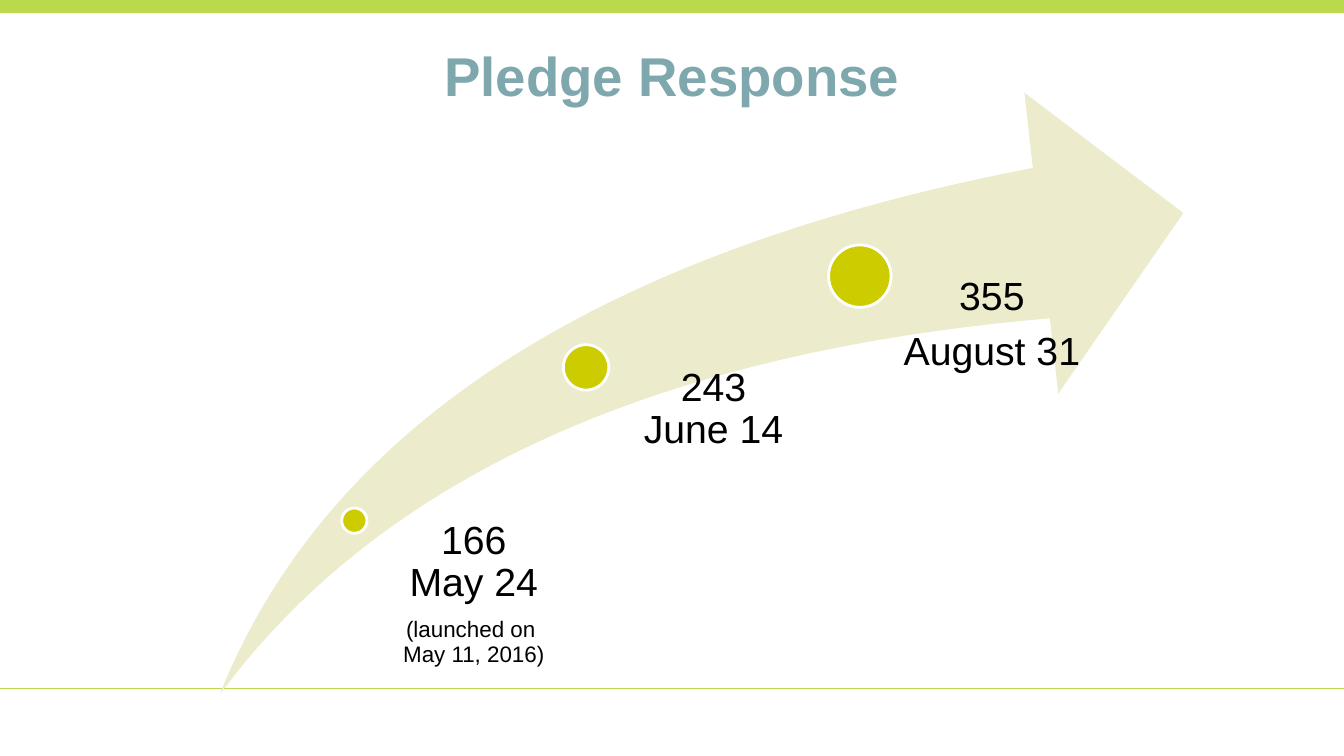
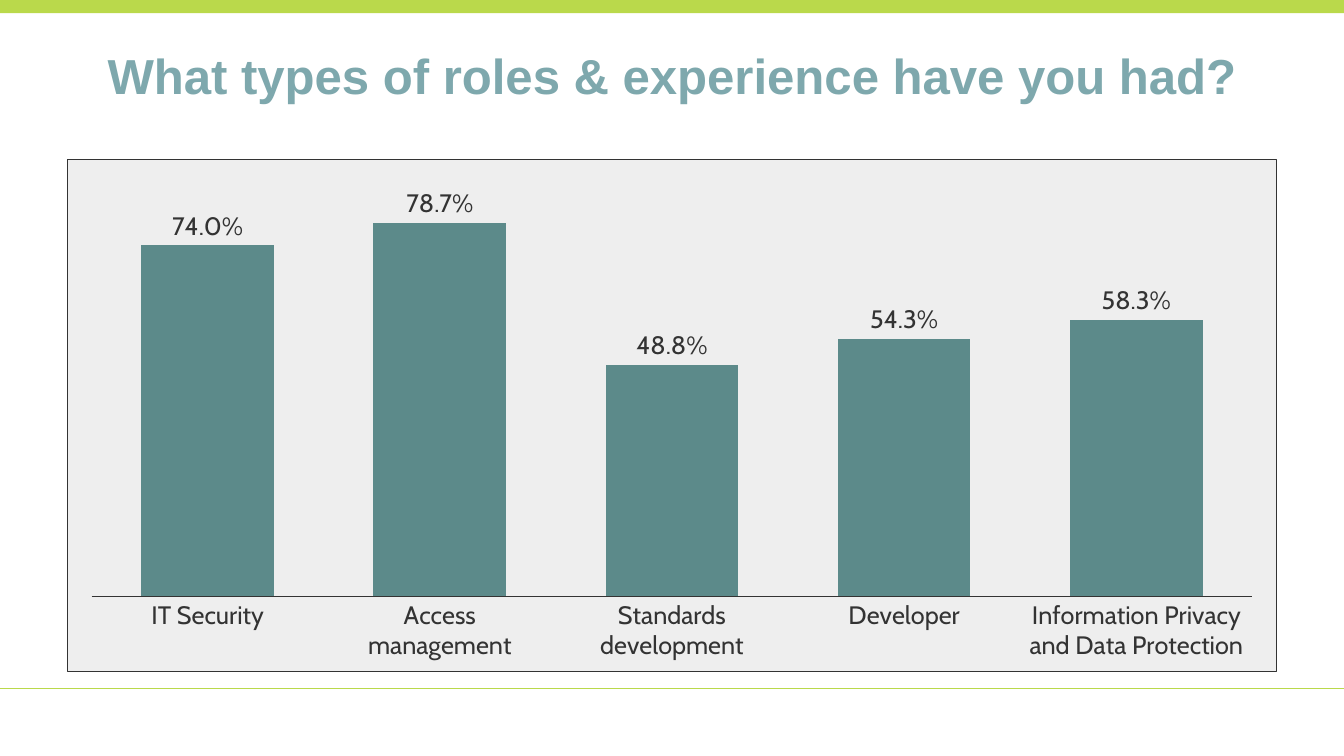
from lxml import etree
from pptx import Presentation
from pptx.chart.data import CategoryChartData
from pptx.dml.color import RGBColor
from pptx.enum.chart import XL_CHART_TYPE, XL_LABEL_POSITION, XL_TICK_MARK
from pptx.enum.shapes import MSO_CONNECTOR, MSO_SHAPE
from pptx.enum.text import MSO_ANCHOR, MSO_AUTO_SIZE, PP_ALIGN
from pptx.oxml import parse_xml
from pptx.oxml.ns import nsdecls, qn
from pptx.util import Inches, Pt

RECTANGLE, OVAL = MSO_SHAPE.RECTANGLE, MSO_SHAPE.OVAL
SWOOSH = MSO_SHAPE.SWOOSH_ARROW
STRAIGHT = MSO_CONNECTOR.STRAIGHT
COLUMNS = XL_CHART_TYPE.COLUMN_CLUSTERED
OUTSIDE_END = XL_LABEL_POSITION.OUTSIDE_END
NO_TICK = XL_TICK_MARK.NONE
CENTER = PP_ALIGN.CENTER
TOP, MIDDLE = MSO_ANCHOR.TOP, MSO_ANCHOR.MIDDLE
NO_FIT = MSO_AUTO_SIZE.NONE
TITLE_ONLY = 5

COLORS = {
    "accent": "BAD94B", "title": "7EA8AD", "swoosh": "ECECCC", "dot": "CCCC00",
    "white": "FFFFFF", "black": "000000", "panel": "EEEEEE", "bar": "5C8A8A",
    "chart_text": "333333",
}
SWOOSH_BOTTOM = 91.87


def color(key):
    return RGBColor.from_string(COLORS[key])


def style_font(font, size, face, ink, bold=False):
    font.size, font.name, font.bold = Pt(size), face, bold
    font.color.rgb = color(ink)


def write(frame, paragraphs, face="Arial", ink="black", bold=False,
          anchor=TOP, spacing=1, after=0, inset=0):
    frame.word_wrap = True
    frame.auto_size = NO_FIT
    frame.vertical_anchor = anchor
    frame.margin_left = inset
    frame.margin_top = frame.margin_right = frame.margin_bottom = 0
    for index, (text, size) in enumerate(paragraphs):
        paragraph = frame.add_paragraph() if index else frame.paragraphs[0]
        paragraph.text = text
        paragraph.alignment = CENTER
        paragraph.line_spacing = spacing
        paragraph.space_after = Pt(after)
        for run in paragraph.runs:
            style_font(run.font, size, face, ink, bold)


class Deck:
    def __init__(self):
        self.file = Presentation()
        self.file.slide_width = Inches(13.33)
        self.file.slide_height = Inches(7.5)
        self.slide = None

    def across(self, share):
        return round(self.file.slide_width * share / 100)

    def down(self, share):
        return round(self.file.slide_height * share / 100)

    def box(self, left, top, width, height):
        return (self.across(left), self.down(top),
                self.across(width), self.down(height))

    def new_slide(self, heading, size):
        self.slide = self.file.slides.add_slide(
            self.file.slide_layouts[TITLE_ONLY])
        title = self.slide.shapes.title
        (title.left, title.top,
         title.width, title.height) = self.box(5, 2.27, 90, 15.33)
        write(title.text_frame, [(heading, size)], ink="title", bold=True,
              anchor=MIDDLE)
        self.shape(RECTANGLE, self.box(0, 0, 100, 1.73), "accent")
        self.rule(91.07)

    def shape(self, preset, bounds, fill, outline=None):
        shape = self.slide.shapes.add_shape(preset, *bounds)
        shape.shadow.inherit = False
        shape.fill.solid()
        shape.fill.fore_color.rgb = color(fill)
        if outline:
            shape.line.color.rgb = color(outline)
            shape.line.width = Pt(2)
        else:
            shape.line.fill.background()
        return shape

    def rule(self, y):
        rule = self.slide.shapes.add_connector(
            STRAIGHT, 0, self.down(y), self.across(100), self.down(y))
        rule.line.color.rgb = color("accent")
        rule.line.width = Pt(0.5)
        etree.SubElement(rule._element.spPr, qn("a:effectLst"))

    def swoosh(self, left, top, width):
        arrow = self.shape(
            SWOOSH, self.box(left, top, width, SWOOSH_BOTTOM - top), "swoosh")
        arrow.adjustments[0] = arrow.adjustments[1] = 0.25

    def milestone(self, x, y, diameter, left, width, inset, paragraphs):
        side = self.across(diameter)
        self.shape(OVAL, (self.across(x) - side // 2, self.down(y) - side // 2,
                          side, side), "dot", outline="white")
        label = self.slide.shapes.add_textbox(
            *self.box(left, y, width, SWOOSH_BOTTOM - y))
        write(label.text_frame, paragraphs, spacing=0.9, after=9.5,
              inset=self.across(inset))

    def column_chart(self, bounds, values):
        data = CategoryChartData(number_format="0.0%")
        data.categories = list(values)
        data.add_series("Series 1", list(values.values()))
        chart = self.slide.shapes.add_chart(COLUMNS, *bounds, data).chart
        chart.has_legend = chart.has_title = False
        style_font(chart.font, 18, "Cabin", "chart_text")
        chart._chartSpace.find(qn("c:chart")).addnext(parse_xml(
            f'<c:spPr {nsdecls("c", "a")}><a:solidFill>'
            f'<a:srgbClr val="{COLORS["panel"]}"/></a:solidFill>'
            f'<a:ln w="{Pt(0.25)}"><a:solidFill>'
            f'<a:srgbClr val="{COLORS["chart_text"]}"/></a:solidFill></a:ln>'
            '</c:spPr>'))

        plot = chart.plots[0]
        plot.gap_width = 75
        plot.vary_by_categories = False
        bars = plot.series[0].format.fill
        bars.solid()
        bars.fore_color.rgb = color("bar")
        plot.has_data_labels = True
        labels = plot.data_labels
        labels.show_value = True
        labels.position = OUTSIDE_END
        labels.number_format = "0.0%"
        labels.number_format_is_linked = False
        style_font(labels.font, 18, "Cabin", "chart_text")

        roles = chart.category_axis
        roles.major_tick_mark = roles.minor_tick_mark = NO_TICK
        roles.format.line.color.rgb = color("chart_text")
        roles.format.line.width = Pt(0.25)
        style_font(roles.tick_labels.font, 18, "Cabin", "chart_text")
        shares = chart.value_axis
        shares.minimum_scale, shares.maximum_scale = 0, 0.9
        shares.has_major_gridlines = False
        shares.visible = False


def main():
    deck = Deck()

    deck.new_slide("Pledge Response", 39)
    deck.swoosh(16.35, 12.27, 71.7)
    milestones = [
        (26.36, 68.87, 1.88, 26.4, 16.72, 0.98,
         [("166\nMay 24", 28), ("(launched on \nMay 11, 2016)", 16)]),
        (43.61, 48.6, 3.38, 43.6, 17.17, 1.8, [("243\nJune 14", 28)]),
        (63.98, 36.53, 4.65, 61.65, 21.82, 2.48,
         [("355", 28), ("August 31", 28)]),
    ]
    for milestone in milestones:
        deck.milestone(*milestone)

    deck.new_slide("What types of roles & experience have you had?", 35.1)
    deck.column_chart(deck.box(5, 21.07, 90, 67.73), {
        "IT Security": 0.74,
        "Access management": 0.787,
        "Standards development": 0.488,
        "Developer": 0.543,
        "Information Privacy and Data Protection": 0.583,
    })

    deck.file.save("out.pptx")


if __name__ == "__main__":
    main()
